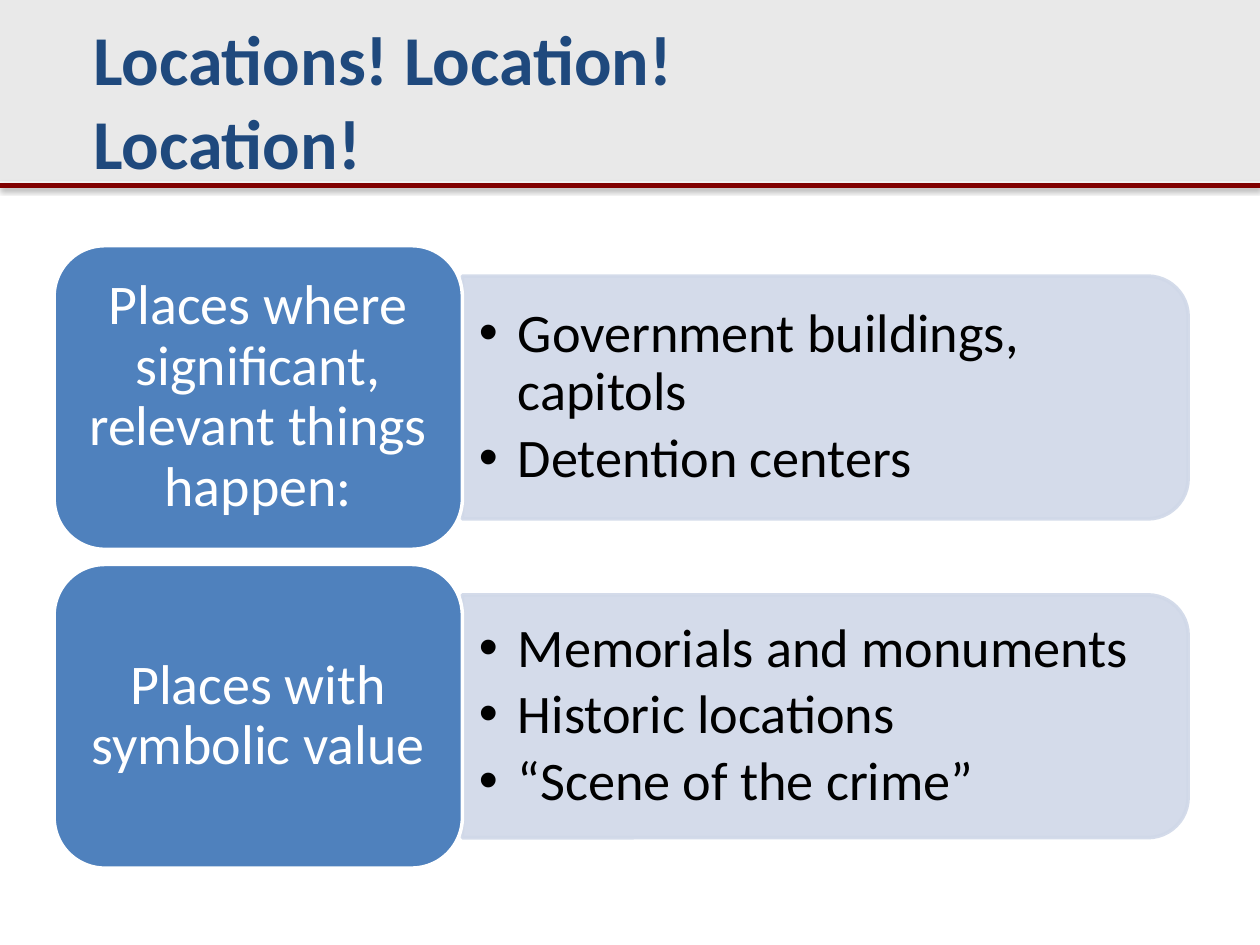
import lxml.etree
import pptx
import pptx.dml.color
import pptx.enum.dml
import pptx.enum.shapes
import pptx.enum.text
import pptx.oxml
import pptx.oxml.ns
import pptx.util

RGBColor = pptx.dml.color.RGBColor
Inches = pptx.util.Inches
Pt = pptx.util.Pt
SHAPE = pptx.enum.shapes.MSO_SHAPE
ANCHOR = pptx.enum.text.MSO_ANCHOR
ALIGN = pptx.enum.text.PP_ALIGN
AUTO_SIZE = pptx.enum.text.MSO_AUTO_SIZE
qn = pptx.oxml.ns.qn

BAND_GREY = RGBColor(0xE9, 0xE9, 0xE9)
RULE_RED = RGBColor(0x80, 0x00, 0x00)
TITLE_BLUE = RGBColor(0x1F, 0x49, 0x7D)
CARD_BLUE = RGBColor(0x4F, 0x81, 0xBD)
PANEL_BLUE = RGBColor(0xD0, 0xD8, 0xE8)
WHITE = RGBColor(0xFF, 0xFF, 0xFF)
BLACK = RGBColor(0x00, 0x00, 0x00)

FONT = "Calibri"
WIDTH, HEIGHT = 10, 7.5
ROW_LEFT, ROW_TOP = 0.43, 1.95
ROW_WIDTH, ROW_HEIGHT, ROW_GAP = 9, 2.41, 0.12
CARD_SHARE = 0.36
PANEL_SHARE = 0.8

ROWS = [
    ("Places where significant, relevant things happen:",
     ["Government buildings, capitols", "Detention centers"]),
    ("Places with symbolic value",
     ["Memorials and monuments", "Historic locations", "“Scene of the crime”"]),
]


def place(shape, left, top, width, height):
    shape.left, shape.top = Inches(left), Inches(top)
    shape.width, shape.height = Inches(width), Inches(height)


def add_box(slide, kind, box, fill, line=None):
    shape = slide.shapes.add_shape(kind, *map(Inches, box))
    shape.shadow.inherit = False
    shape.fill.solid()
    shape.fill.fore_color.rgb = fill
    if line is None:
        shape.line.fill.background()
    else:
        shape.line.color.rgb = line
        shape.line.width = Pt(2)
    return shape


def make_translucent(shape, percent):
    for color in list(shape.element.spPr.iter(qn("a:srgbClr"))):
        lxml.etree.SubElement(color, qn("a:alpha"), val=str(percent * 1000))


def write_text(shape, lines, size, color, bold=False, align=ALIGN.LEFT,
               anchor=ANCHOR.MIDDLE, margins=(0.1, 0.05), spacing=None,
               after=0, bullets=False, auto_size=AUTO_SIZE.NONE):
    frame = shape.text_frame
    frame.text = "\n".join(lines)
    frame.word_wrap = True
    frame.auto_size = auto_size
    frame.vertical_anchor = anchor
    frame.margin_left = frame.margin_right = Inches(margins[0])
    frame.margin_top = frame.margin_bottom = Inches(margins[1])
    for paragraph in frame.paragraphs:
        paragraph.alignment = align
        paragraph.line_spacing = spacing
        paragraph.space_before = Pt(0)
        paragraph.space_after = Pt(after)
        if bullets:
            paragraph.level = 1
            properties = paragraph._p.get_or_add_pPr()
            properties.set("marL", str(Inches(0.31)))
            properties.set("indent", str(-Inches(0.31)))
            lxml.etree.SubElement(properties, qn("a:buFont"), typeface="Arial")
            lxml.etree.SubElement(properties, qn("a:buChar"), char="•")
        for run in paragraph.runs:
            run.font.name = FONT
            run.font.size = Pt(size)
            run.font.bold = bold
            run.font.color.rgb = color


def add_header(slide, left, top, width, height):
    # Grey band
    band = add_box(slide, SHAPE.RECTANGLE, (left, top, width, height), BAND_GREY)

    # Red rule with a soft shadow below it
    rule_y = Inches(top + height + 0.03)
    rule = slide.shapes.add_connector(
        pptx.enum.shapes.MSO_CONNECTOR.STRAIGHT,
        Inches(left), rule_y, Inches(left + width), rule_y)
    rule.line.color.rgb = RULE_RED
    rule.line.width = Pt(3)
    effects = lxml.etree.SubElement(rule.element.spPr, qn("a:effectLst"))
    shadow = lxml.etree.SubElement(
        effects, qn("a:outerShdw"), blurRad=str(Pt(3.1)), dist=str(Pt(1.6)),
        dir="5400000", rotWithShape="0")
    color = lxml.etree.SubElement(shadow, qn("a:srgbClr"), val="000000")
    lxml.etree.SubElement(color, qn("a:alpha"), val="38000")

    # Title, in front of the band
    title = slide.shapes.title
    rule.element.addnext(title.element)
    place(title, left + 0.64, top + 0.07, 5.94, 1.45)
    write_text(title, ["Locations! Location! Location!"], 40, TITLE_BLUE,
               bold=True, anchor=ANCHOR.TOP,
               auto_size=AUTO_SIZE.SHAPE_TO_FIT_TEXT)


def add_row(slide, placeholder, label, items, left, top, width, height):
    card_width = width * CARD_SHARE
    panel_left, panel_width = left + card_width, width - card_width
    panel_height = height * PANEL_SHARE
    middle = top + height / 2

    # Panel rounded on its right side: a top-rounded shape turned by 90 degrees
    center = panel_left + panel_width / 2
    panel = add_box(slide, SHAPE.ROUND_2_SAME_RECTANGLE,
                    (center - panel_height / 2, middle - panel_width / 2,
                     panel_height, panel_width), PANEL_BLUE, PANEL_BLUE)
    panel.rotation = 90
    make_translucent(panel, 90)

    # List, in front of the panel
    panel.element.addnext(placeholder.element)
    list_height = panel_height * 0.9
    place(placeholder, panel_left, middle - list_height / 2,
          panel_width - 0.09, list_height)
    write_text(placeholder, items, 31, BLACK, margins=(0.13, 0.06),
               spacing=0.9, after=4.65, bullets=True)

    # Label card
    card = add_box(slide, SHAPE.ROUNDED_RECTANGLE,
                   (left, top, card_width, height), CARD_BLUE, WHITE)
    write_text(card, [label], 32, WHITE, align=ALIGN.CENTER,
               margins=(0.13, 0.07), spacing=0.9, after=11.2)


def main():
    presentation = pptx.Presentation()
    presentation.slide_width = Inches(WIDTH)
    presentation.slide_height = Inches(HEIGHT)
    two_lists = presentation.slide_layouts.get_by_name("Two Content")
    slide = presentation.slides.add_slide(two_lists)
    lists = [slide.placeholders[1], slide.placeholders[2]]

    add_header(slide, 0, 0, WIDTH, 1.44)
    for index, (label, items) in enumerate(ROWS):
        add_row(slide, lists[index], label, items, ROW_LEFT,
                ROW_TOP + index * (ROW_HEIGHT + ROW_GAP), ROW_WIDTH, ROW_HEIGHT)
    presentation.save("out.pptx")


if __name__ == "__main__":
    main()
